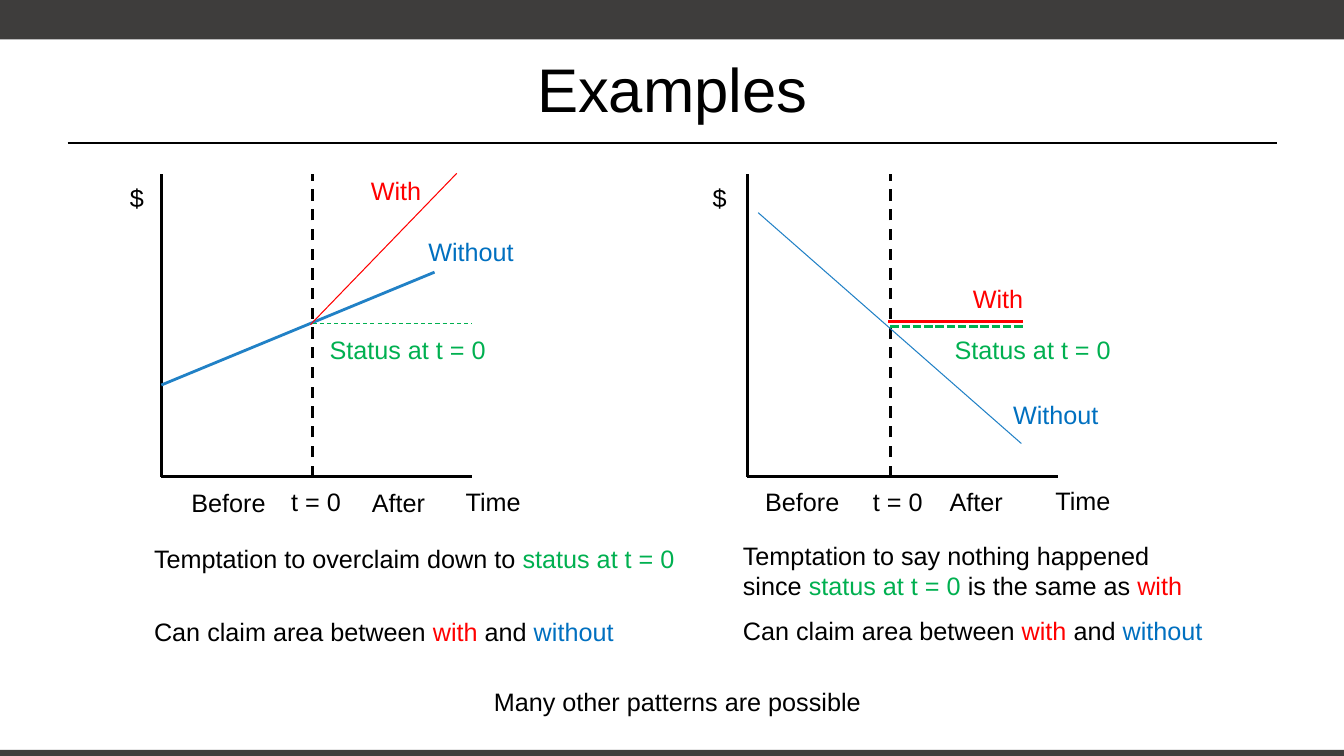
import pptx
import pptx.util
import pptx.dml.color
import pptx.enum.dml
import pptx.enum.shapes
import pptx.enum.text
import pptx.oxml.ns
import lxml.etree

RGB = pptx.dml.color.RGBColor
BLACK = RGB(0x00, 0x00, 0x00)
DARK = RGB(0x3E, 0x3D, 0x3C)
RED = RGB(0xFF, 0x00, 0x00)
GREEN = RGB(0x00, 0xB0, 0x50)
BLUE = RGB(0x00, 0x70, 0xC0)
TREND = RGB(0x21, 0x81, 0xC6)
DASH = pptx.enum.dml.MSO_LINE.DASH
SQUARE = pptx.enum.dml.MSO_LINE.SQUARE_DOT
TOP = pptx.enum.text.MSO_ANCHOR.TOP
MIDDLE = pptx.enum.text.MSO_ANCHOR.MIDDLE
CENTER = pptx.enum.text.PP_ALIGN.CENTER
WIDE, HIGH = 1333, 750
AXIS_W, AXIS_H = 308, 300


def px(n):
    """Turn px, 100 to the inch, into EMU."""
    return pptx.util.Emu(n * 9144)


def write(frame, runs, size=18, color=BLACK, align=None, anchor=TOP, wrap=False):
    """Fill a text frame with a string or with (text, colour) runs."""
    frame.word_wrap = wrap
    frame.vertical_anchor = anchor
    if not wrap:
        frame.margin_right = 0
    para = frame.paragraphs[0]
    para.alignment = align
    for text, tint in [(runs, color)] if isinstance(runs, str) else runs:
        run = para.add_run()
        run.text = text
        run.font.name = "Arial"
        run.font.size = pptx.util.Pt(size)
        run.font.color.rgb = tint


def label(slide, box, runs, **look):
    shape = slide.shapes.add_textbox(*map(px, box))
    write(shape.text_frame, runs, **look)


def line(slide, start, end, color=BLACK, width=2, dash=None):
    ends = map(px, (*start, *end))
    link = slide.shapes.add_connector(
        pptx.enum.shapes.MSO_CONNECTOR.STRAIGHT, *ends)
    link.line.color.rgb = color
    link.line.width = pptx.util.Pt(width)
    if dash:
        link.line.dash_style = dash
    lxml.etree.SubElement(link._element.spPr, pptx.oxml.ns.qn("a:effectLst"))


def bar(slide, top, high):
    shape = slide.shapes.add_shape(
        pptx.enum.shapes.MSO_SHAPE.RECTANGLE, 0, px(top), px(WIDE), px(high))
    shape.shadow.inherit = False
    shape.fill.solid()
    shape.fill.fore_color.rgb = DARK
    shape.line.fill.background()


def header(slide):
    bar(slide, 0, 39)
    bar(slide, 744, 6)
    line(slide, (67, 142), (1267, 142), width=1.25)
    title = slide.shapes.title
    title.left, title.top, title.width, title.height = map(px, (67, 25, 1200, 125))
    write(title.text_frame, "Examples", size=44, align=CENTER,
          anchor=MIDDLE, wrap=True)


def graph(slide, left, top, start, ticks, lines, names):
    """Draw axes, the start of the project, trends and their names."""
    base = top + AXIS_H
    line(slide, (left, top), (left, base))
    line(slide, (left, base), (left + AXIS_W, base))
    line(slide, (left + start, base), (left + start, top), dash=DASH)
    for (x1, y1), (x2, y2), *look in lines:
        line(slide, (left + x1, top + y1), (left + x2, top + y2), *look)
    for text, x, y, wide in ticks:
        label(slide, (left + x, top + y, wide, 40), text)
    for text, x, y, wide, color in names:
        label(slide, (left + x, top + y, wide, 34), text,
              color=color, anchor=MIDDLE)


def notes(slide, left, first, second):
    """Set the two remarks below a graph; each is (top, width, runs)."""
    for top, wide, runs in (first, second):
        label(slide, (left, top, wide, 40), runs, wrap=True)


def main():
    deck = pptx.Presentation()
    deck.slide_width, deck.slide_height = px(WIDE), px(HIGH)
    slide = deck.slides.add_slide(deck.slide_layouts[5])
    header(slide)

    graph(
        slide, 160, 173, 150,
        [("$", -41, 3, 34), ("Before", 20, 306, 95), ("t = 0", 119, 305, 71),
         ("After", 199, 306, 73), ("Time", 292, 305, 76)],
        [((0, 209), (271, 97), TREND),
         ((293, -1), (148, 149), RED, 0.75),
         ((150, 148), (308, 148), GREEN, 0.75, DASH)],
        [("With", 198, -1, 65, RED), ("Without", 255, 59, 103, BLUE),
         ("Status at t = 0", 157, 157, 174, GREEN)])
    graph(
        slide, 741, 173, 142,
        [("$", -44, 3, 34), ("Before", 8, 305, 95), ("t = 0", 115, 305, 78),
         ("After", 191, 305, 73), ("Time", 296, 304, 77)],
        [((11, 38), (272, 267), TREND, 0.75),
         ((140, 146), (274, 146), RED),
         ((142, 151), (275, 151), GREEN, 2, SQUARE)],
        [("With", 214, 106, 65, RED), ("Without", 254, 221, 103, BLUE),
         ("Status at t = 0", 196, 157, 174, GREEN)])

    claim = [("Can claim area between ", BLACK), ("with", RED),
             (" and ", BLACK), ("without", BLUE)]
    notes(slide, 143,
          (534, 542, [("Temptation to overclaim down to ", BLACK),
                      ("status at t = 0", GREEN)]),
          (607, 480, claim))
    notes(slide, 727,
          (531, 466, [("Temptation to say nothing happened since ", BLACK),
                      ("status at t = 0 ", GREEN),
                      ("is the same as ", BLACK), ("with", RED)]),
          (606, 480, claim))
    label(slide, (480, 676, 393, 40), "Many other patterns are possible")
    deck.save("out.pptx")


if __name__ == "__main__":
    main()
